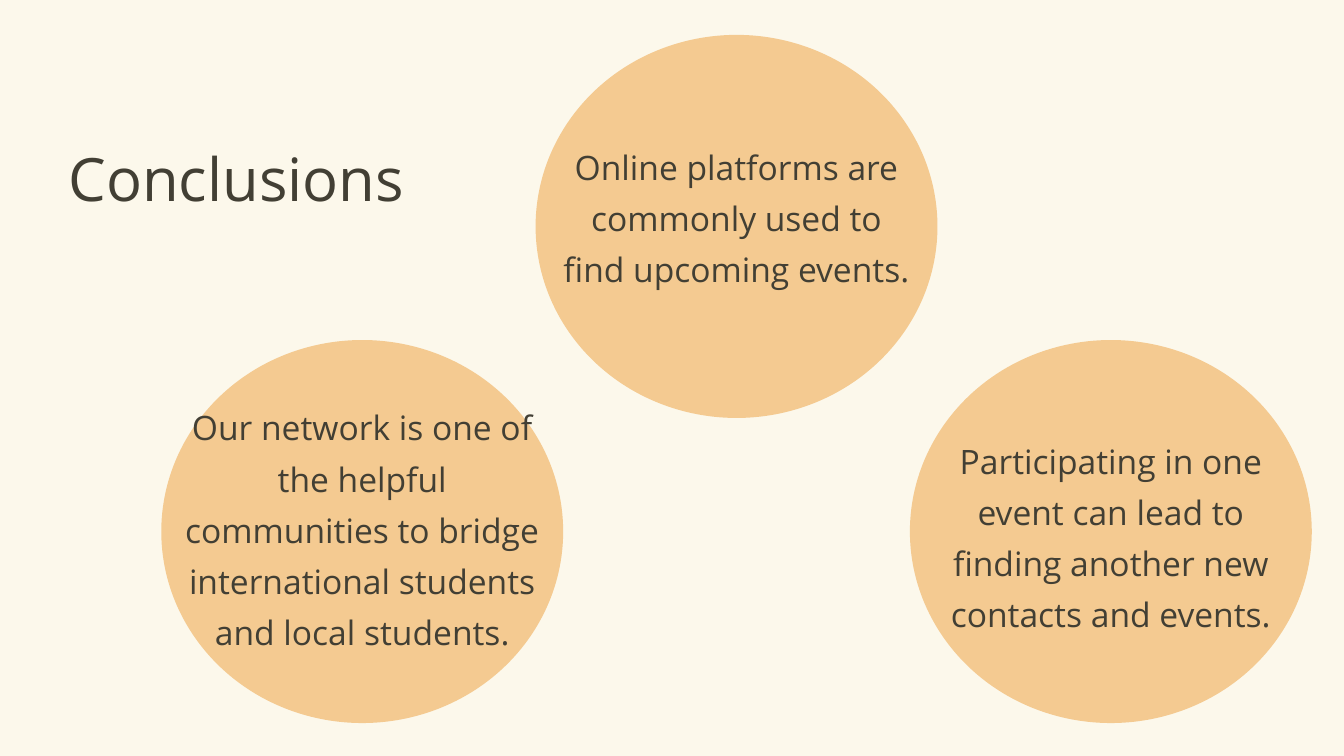
from pptx import Presentation, util as u
from pptx.dml.color import RGBColor
from pptx.enum import shapes, text

WIDTH = 10
HEIGHT = WIDTH * 9 / 16
CREAM, APRICOT, INK = "FCF8EB", "F4CA91", "423F34"
CIRCLE_W, CIRCLE_H = 2.99, 2.85
FIRST_LEFT, LAST_LEFT = 1.2, 6.77
UPPER_ROW, LOWER_ROW = 0.26, 2.53
TEXT_W = 2.68

CONCLUSIONS = [
    (LOWER_ROW, 0.42, 2.23, "Our network is one of the helpful communities to bridge "
                            "international students and local students."),
    (UPPER_ROW, 0.75, 1.46, "Online platforms are commonly used to find upcoming events."),
    (LOWER_ROW, 0.67, 1.46, "Participating in one event can lead to finding another new "
                            "contacts and events."),
]


def paint(color_format, color):
    """Set a fill or font colour from a hex string."""
    color_format.rgb = RGBColor.from_string(color)


def inches(*box):
    """Turn numbers in inches into lengths."""
    return [u.Inches(length) for length in box]


def add_words(slide, box, words, size, align):
    """Place one paragraph of wrapped text in the given box."""
    frame = slide.shapes.add_textbox(*inches(*box)).text_frame
    frame.word_wrap = True
    frame.auto_size = text.MSO_AUTO_SIZE.SHAPE_TO_FIT_TEXT
    frame.margin_left = frame.margin_top = frame.margin_right = frame.margin_bottom = 0
    paragraph = frame.paragraphs[0]
    paragraph.text = words
    paragraph.alignment = align
    paragraph.line_spacing = 1.27
    paragraph.font.name = "Open Sans"
    paragraph.font.size = u.Pt(size)
    paint(paragraph.font.color, INK)


def add_conclusion(slide, box, text_drop, text_height, words):
    """Draw a circle in the given box with its conclusion on top."""
    left, top, width, _ = box
    circle = slide.shapes.add_shape(shapes.MSO_SHAPE.OVAL, *inches(*box))
    circle.shadow.inherit = False
    circle.fill.solid()
    paint(circle.fill.fore_color, APRICOT)
    circle.line.fill.background()
    words_box = (left + (width - TEXT_W) / 2, top + text_drop, TEXT_W, text_height)
    add_words(slide, words_box, words, 18, text.PP_ALIGN.CENTER)


def main():
    """Build the conclusions slide and save it."""
    deck = Presentation()
    deck.slide_width, deck.slide_height = inches(WIDTH, HEIGHT)
    slide = deck.slides.add_slide(deck.slide_layouts[6])
    slide.background.fill.solid()
    paint(slide.background.fill.fore_color, CREAM)
    add_words(slide, (0.51, 0.91, 2.99, 0.54), "Conclusions", 32, text.PP_ALIGN.LEFT)
    column_step = (LAST_LEFT - FIRST_LEFT) / (len(CONCLUSIONS) - 1)
    for column, (top, text_drop, text_height, words) in enumerate(CONCLUSIONS):
        box = (FIRST_LEFT + column * column_step, top, CIRCLE_W, CIRCLE_H)
        add_conclusion(slide, box, text_drop, text_height, words)
    deck.save("out.pptx")


if __name__ == "__main__":
    main()
